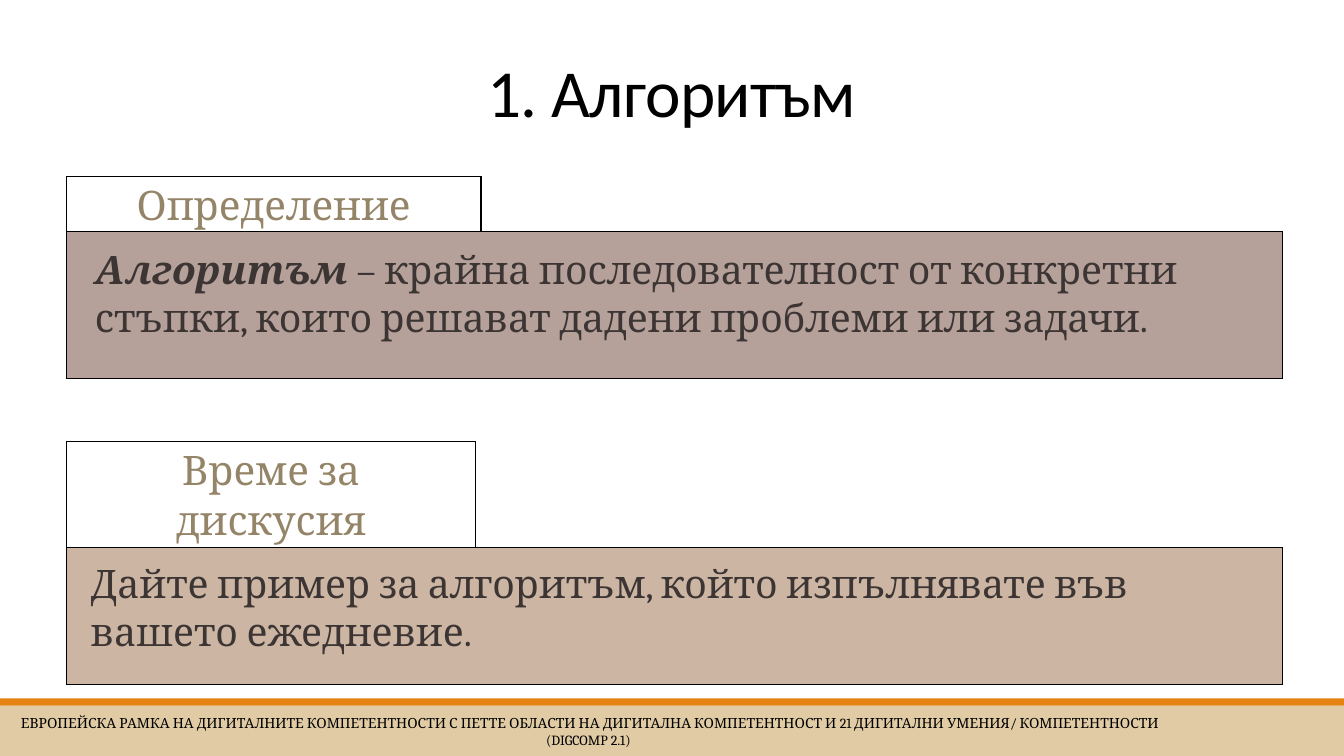
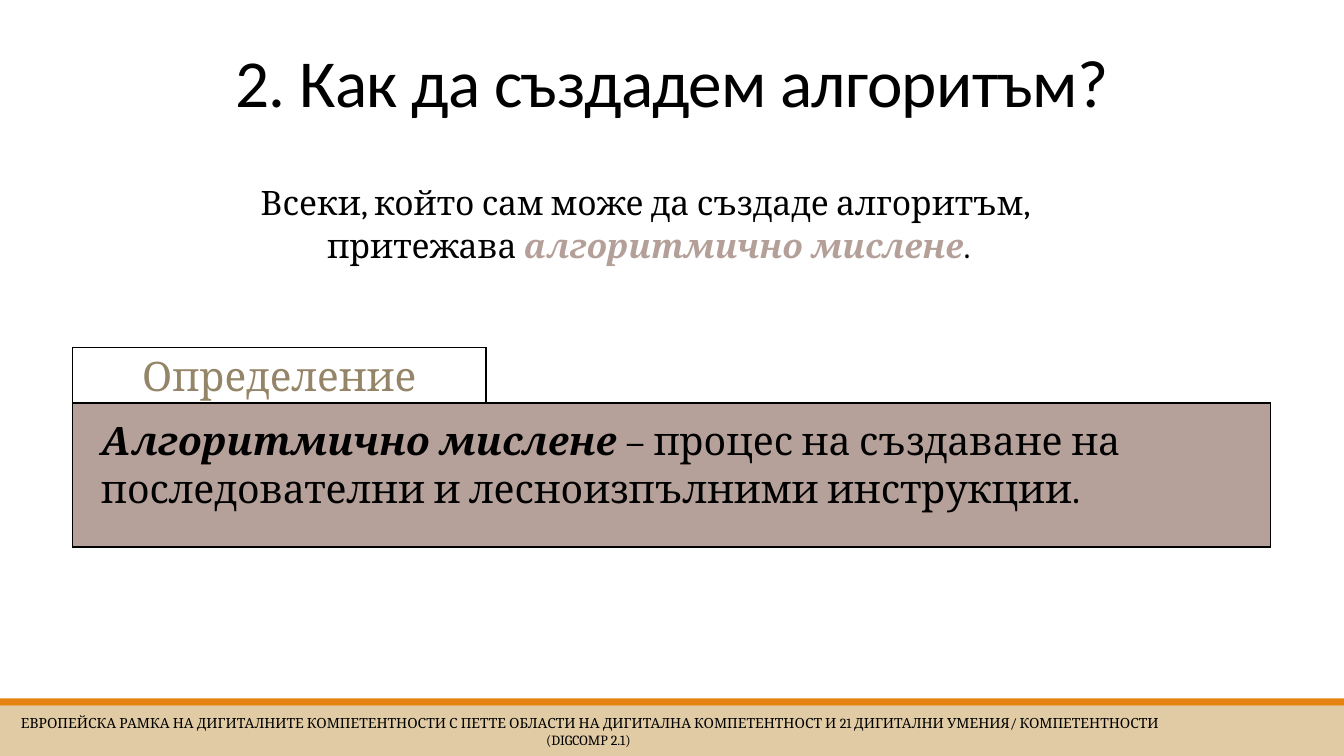
from dataclasses import dataclass

from pptx import Presentation
from pptx.dml.color import RGBColor
from pptx.enum.shapes import MSO_SHAPE
from pptx.enum.text import MSO_ANCHOR, MSO_AUTO_SIZE, PP_ALIGN
from pptx.oxml import parse_xml
from pptx.oxml.ns import nsdecls
from pptx.util import Inches, Pt

RECTANGLE = MSO_SHAPE.RECTANGLE
CENTER, LEFT = PP_ALIGN.CENTER, PP_ALIGN.LEFT
TOP, MIDDLE, BOTTOM = MSO_ANCHOR.TOP, MSO_ANCHOR.MIDDLE, MSO_ANCHOR.BOTTOM
NO_AUTOFIT, GROW = MSO_AUTO_SIZE.NONE, MSO_AUTO_SIZE.SHAPE_TO_FIT_TEXT


@dataclass(frozen=True)
class Theme:
    heading_font: str = "Calibri"
    text_font: str = "Cambria"
    title_size: int = 48
    label_size: int = 29
    body_size: int = 28
    intro_size: int = 24
    footer_size: int = 10
    black: str = "000000"
    umber: str = "3C3534"
    mauve: str = "B5A19A"
    accent: str = "B4A099"
    sand: str = "CCB6A3"
    band: str = "E0CBA4"
    stripe: str = "E48312"
    label_stops: tuple = ((0, "675B46"), (50, "958568"), (100, "B29F7E"))


theme = Theme()
EMPHASIS = {"bold": True, "italic": True}
LABEL_FORMAT = {"alignment": CENTER, "line_spacing": 1.07, "space_after": Pt(8)}
BODY_FORMAT = {"alignment": LEFT, "line_spacing": 1.07,
               "space_before": Pt(6), "space_after": Pt(6)}
FOOTER = (" ЕВРОПЕЙСКА РАМКА НА ДИГИТАЛНИТЕ КОМПЕТЕНТНОСТИ С ПЕТТЕ ОБЛАСТИ НА ДИГИТАЛНА "
          "КОМПЕТЕНТНОСТ И 21 ДИГИТАЛНИ УМЕНИЯ/ КОМПЕТЕНТНОСТИ (DIGCOMP 2.1)")

SLIDES = [
    {
        "title": "1. Алгоритъм",
        "title_top": 0.45,
        "intro": [],
        "cards": [
            {"label": "Време за дискусия", "at": (0.66, 4.38),
             "columns": (4.06, 8), "rows": (0.63, 1.36),
             "inset": (0.18, 0.02, 0.24, 0.12), "fill": theme.sand, "color": theme.umber,
             "body": [("Дайте пример за алгоритъм, който изпълнявате във вашето ежедневие.", {})]},
            {"label": "Определение", "at": (0.66, 1.75),
             "columns": (4.11, 7.95), "rows": (0.53, 1.46),
             "inset": (0.21, 0.03, 0.28, 0.14), "fill": theme.mauve, "color": theme.umber,
             "body": [("Алгоритъм ", EMPHASIS),
                      ("– крайна последователност от конкретни стъпки, "
                       "които решават дадени проблеми или задачи.", {})]},
        ],
    },
    {
        "title": "2. Как да създадем алгоритъм?",
        "title_top": 0.35,
        "intro": [
            [("Всеки, който сам може да създаде алгоритъм, ", {})],
            [("притежава ", {}),
             ("алгоритмично мислене", {"color": theme.accent, **EMPHASIS}),
             (".", {})],
        ],
        "cards": [
            {"label": "Определение", "at": (0.72, 3.45),
             "columns": (4.1, 7.78), "rows": (0.53, 1.43),
             "inset": (0.21, 0.03, 0.28, 0.14), "fill": theme.mauve, "color": theme.black,
             "body": [("Алгоритмично мислене", EMPHASIS),
                      (" – процес на създаване на последователни "
                       "и лесноизпълними инструкции.", {})]},
        ],
    },
]


def write(paragraph, runs, size, color=theme.black, name=theme.text_font, **paragraph_format):
    for key, value in paragraph_format.items():
        setattr(paragraph, key, value)
    for text, changes in runs:
        run = paragraph.add_run()
        run.text = text
        values = {"size": Pt(size), "name": name, "bold": False, "italic": False,
                  "color": color, **changes}
        run.font.color.rgb = RGBColor.from_string(values.pop("color"))
        for key, value in values.items():
            setattr(run.font, key, value)


def style_cell(cell, edges, fill=None, **cell_format):
    for edge in "LRTB":
        paint = (f'<a:solidFill><a:srgbClr val="{theme.black}"/></a:solidFill>'
                 if edge in edges else "<a:noFill/>")
        cell._tc.get_or_add_tcPr().append(parse_xml(
            f'<a:ln{edge} {nsdecls("a")} w="{Pt(1)}">{paint}</a:ln{edge}>'))
    if fill:
        cell.fill.solid()
        cell.fill.fore_color.rgb = RGBColor.from_string(fill)
    else:
        cell.fill.background()
    for key, value in cell_format.items():
        setattr(cell, key, value)


prs = Presentation()
prs.slide_width, prs.slide_height = Inches(13.33), Inches(7.5)
title_only = prs.slide_layouts[5]

for content in SLIDES:
    slide = prs.slides.add_slide(title_only)

    if content is SLIDES[0]:
        for top, height, color in ((7, 0.5, theme.band), (6.93, 0.07, theme.stripe)):
            band = slide.shapes.add_shape(RECTANGLE, 0, Inches(top), prs.slide_width, Inches(height))
            band.shadow.inherit = False
            band.fill.solid()
            band.fill.fore_color.rgb = RGBColor.from_string(color)
            band.line.fill.background()
            title_only.shapes.element.append(band.element)

    footer = slide.shapes.add_textbox(0, Inches(7.06), Inches(11.67), Inches(0.4)).text_frame
    inset = Inches(0.04)
    for key, value in {"word_wrap": True, "vertical_anchor": MIDDLE,
                       "margin_left": inset, "margin_right": inset,
                       "margin_top": inset, "margin_bottom": inset}.items():
        setattr(footer, key, value)
    write(footer.paragraphs[0], [(FOOTER, {})], theme.footer_size, alignment=CENTER)

    title = slide.shapes.title
    for key, value in {"left": 0, "top": Inches(content["title_top"]),
                       "width": prs.slide_width, "height": Inches(0.9)}.items():
        setattr(title, key, value)
    title.text_frame.vertical_anchor = BOTTOM
    title.text_frame.auto_size = NO_AUTOFIT
    heading = title.text_frame.paragraphs[0]
    write(heading, [(content["title"], {})], theme.title_size, name=theme.heading_font,
          alignment=CENTER, line_spacing=0.85)
    heading.runs[0]._r.get_or_add_rPr().set("spc", "-50")

    for card in content["cards"]:
        left, top = card["at"]
        table = slide.shapes.add_table(
            2, 2, Inches(left), Inches(top),
            Inches(sum(card["columns"])), Inches(sum(card["rows"]))).table
        table.first_row = table.horz_banding = False
        for column, width in zip(table.columns, card["columns"]):
            column.width = Inches(width)
        for row, height in zip(table.rows, card["rows"]):
            row.height = Inches(height)

        label_side, label_top, body_side, body_top = map(Inches, card["inset"])
        label, corner = table.cell(0, 0), table.cell(0, 1)
        body, body_end = table.cell(1, 0), table.cell(1, 1)
        body.merge(body_end)
        style_cell(label, "LRTB", vertical_anchor=MIDDLE,
                   margin_left=label_side, margin_right=label_side,
                   margin_top=label_top, margin_bottom=0)
        style_cell(corner, "LB")
        for part in (body, body_end):
            style_cell(part, "LRTB", card["fill"], vertical_anchor=TOP,
                       margin_left=body_side, margin_right=body_side,
                       margin_top=body_top, margin_bottom=body_top)

        label_text = label.text_frame.paragraphs[0]
        write(label_text, [(card["label"], {})], theme.label_size, **LABEL_FORMAT)
        label_text.runs[0].font.fill.background()
        label_properties = label_text.runs[0]._r.get_or_add_rPr()
        stops = "".join(f'<a:gs pos="{position * 1000}"><a:srgbClr val="{color}"/></a:gs>'
                        for position, color in theme.label_stops)
        label_properties.replace(label_properties[0], parse_xml(
            f'<a:gradFill {nsdecls("a")}><a:gsLst>{stops}</a:gsLst>'
            '<a:lin ang="18900000" scaled="1"/></a:gradFill>'))
        write(body.text_frame.paragraphs[0], card["body"], theme.body_size, card["color"],
              **BODY_FORMAT)

    if content["intro"]:
        intro = slide.shapes.add_textbox(
            Inches(0.16), Inches(1.73), Inches(12.55), Inches(0.93)).text_frame
        intro.word_wrap = True
        intro.auto_size = GROW
        for index, runs in enumerate(content["intro"]):
            line = intro.add_paragraph() if index else intro.paragraphs[0]
            write(line, runs, theme.intro_size, alignment=CENTER, line_spacing=1.07)

prs.save("out.pptx")
